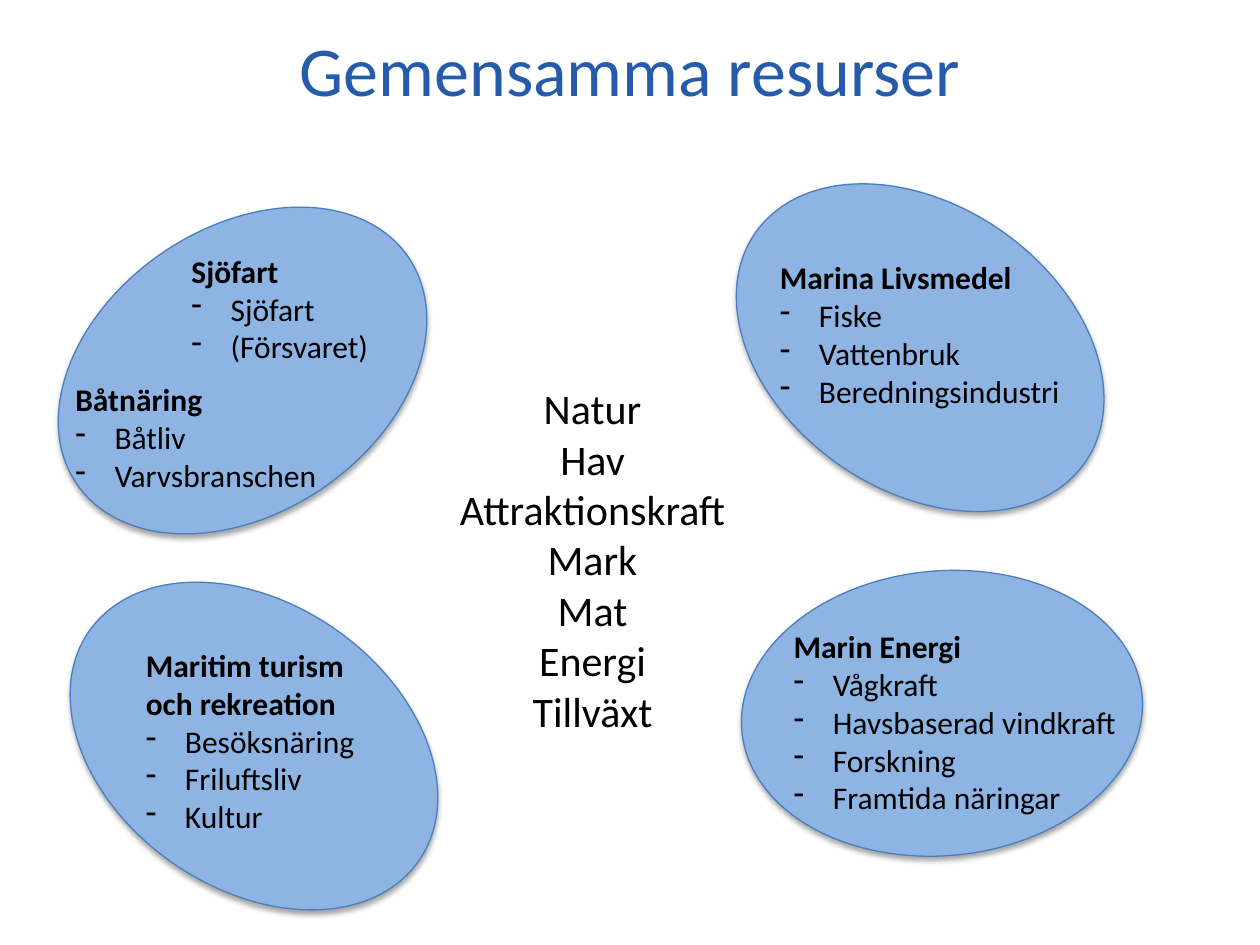
import pptx
import pptx.util
from lxml import etree
from pptx.dml.color import RGBColor
from pptx.enum.shapes import MSO_SHAPE
from pptx.enum.text import MSO_ANCHOR, MSO_AUTO_SIZE, PP_ALIGN
from pptx.oxml.ns import qn
from pptx.util import Cm, Pt

TITLE_BLUE = RGBColor(0x26, 0x5B, 0xAB)
ELLIPSE_FILL = RGBColor(0x8E, 0xB4, 0xE3)
ELLIPSE_LINE = RGBColor(0x4B, 0x7E, 0xBC)
BLACK = RGBColor(0, 0, 0)
FONT = "Calibri"
BULLET_INDENT = Cm(0.79)

# left, top, rotation
ELLIPSES = [
    (1.07, 12.17, 34.9),
    (14.94, 11.51, 354.9),
    (14.5, 4.14, 34.9),
    (0.84, 4.6, 325.6),
]

# left, top, width, heading lines, bulleted items
RESOURCE_GROUPS = [
    (15.47, 5.08, 6.17, ["Marina Livsmedel"],
     ["Fiske", "Vattenbruk", "Beredningsindustri"]),
    (3.61, 4.95, 4.11, ["Sjöfart"], ["Sjöfart", "(Försvaret)"]),
    (2.69, 12.9, 4.72, ["Maritim turism", "och rekreation"],
     ["Besöksnäring", "Friluftsliv", "Kultur"]),
    (15.75, 12.52, 7.11, ["Marin Energi"],
     ["Vågkraft", "Havsbaserad vindkraft", "Forskning", "Framtida näringar"]),
    (1.27, 7.54, 5.44, ["Båtnäring"], ["Båtliv", "Varvsbranschen"]),
]

SHARED_RESOURCES = ["Natur", "Hav", "Attraktionskraft", "Mark", "Mat", "Energi", "Tillväxt"]


def add_text(left, top, width, height, lines, size, color, alignment, wrap=True):
    """Add a text box with one paragraph per line and return its text frame."""
    box = slide.shapes.add_textbox(Cm(left), Cm(top), Cm(width), Cm(height))
    frame = box.text_frame
    frame.word_wrap = wrap
    frame.text = "\n".join(lines)
    for paragraph in frame.paragraphs:
        paragraph.alignment = alignment
        paragraph.font.name = FONT
        paragraph.font.size = Pt(size)
        paragraph.font.color.rgb = color
    return frame


def add_dash_bullet(paragraph):
    properties = paragraph._p.get_or_add_pPr()
    properties.set("marL", str(BULLET_INDENT))
    properties.set("indent", str(-BULLET_INDENT))
    bullet = etree.Element(qn("a:buChar"), char="-")
    properties.insert(0, bullet)


presentation = pptx.Presentation()
presentation.slide_width = Cm(25.4)
presentation.slide_height = Cm(19.05)
slide = presentation.slides.add_slide(presentation.slide_layouts[6])

for left, top, rotation in ELLIPSES:
    ellipse = slide.shapes.add_shape(MSO_SHAPE.OVAL, Cm(left), Cm(top), Cm(8.1), Cm(5.74))
    ellipse.rotation = rotation
    ellipse.fill.solid()
    ellipse.fill.fore_color.rgb = ELLIPSE_FILL
    ellipse.line.color.rgb = ELLIPSE_LINE
    ellipse.line.width = Pt(0.75)
    ellipse.shadow.inherit = False
    effects = ellipse._element.spPr.find(qn("a:effectLst"))
    shadow = etree.SubElement(effects, qn("a:outerShdw"), blurRad=str(Pt(3.1)),
                              dist=str(Pt(1.8)), dir="5400000", rotWithShape="0")
    shadow_color = etree.SubElement(shadow, qn("a:srgbClr"), val=str(BLACK))
    etree.SubElement(shadow_color, qn("a:alpha"), val="35000")

title = add_text(1.27, -0.2, 22.86, 3.18, ["Gemensamma resurser"], 40, TITLE_BLUE, PP_ALIGN.CENTER)
title.vertical_anchor = MSO_ANCHOR.MIDDLE

for left, top, width, heading, items in RESOURCE_GROUPS:
    lines = heading + items
    height = 0.25 + 0.77 * len(lines)
    group = add_text(left, top, width, height, lines, 18, BLACK, PP_ALIGN.LEFT, wrap=False)
    group.auto_size = MSO_AUTO_SIZE.SHAPE_TO_FIT_TEXT
    for paragraph in group.paragraphs[:len(heading)]:
        paragraph.font.bold = True
    for paragraph in group.paragraphs[len(heading):]:
        add_dash_bullet(paragraph)

shared = add_text(8.86, 7.59, 6.17, 7.44, SHARED_RESOURCES, 24, BLACK, PP_ALIGN.CENTER)
shared.auto_size = MSO_AUTO_SIZE.SHAPE_TO_FIT_TEXT

presentation.save("out.pptx")
